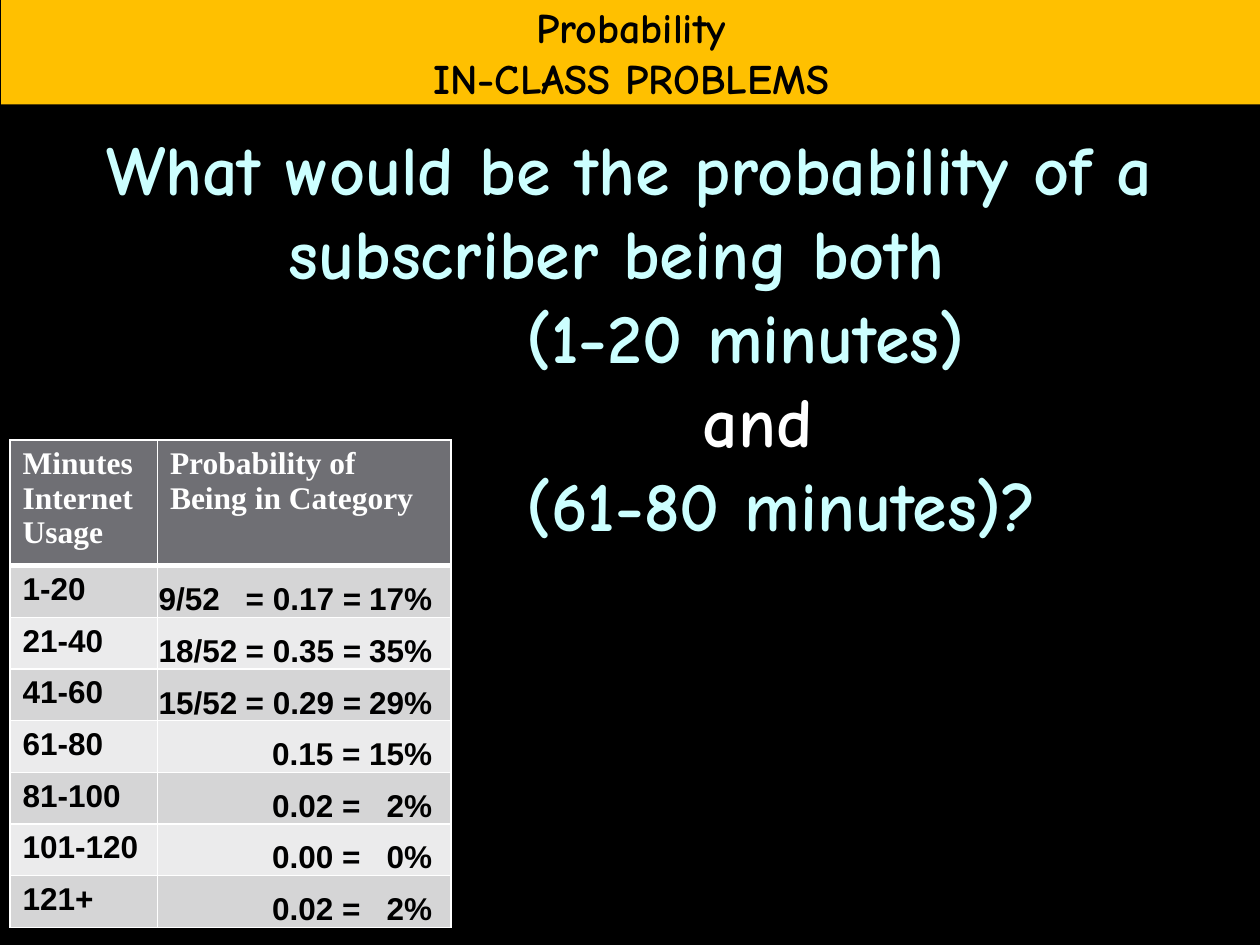
from pptx import Presentation
from pptx.dml.color import RGBColor
from pptx.enum.shapes import MSO_SHAPE
from pptx.enum.text import MSO_ANCHOR, PP_ALIGN
from pptx.oxml.ns import qn
from pptx.util import Inches, Pt
from lxml.etree import SubElement

COLORS = {name: RGBColor.from_string(h) for name, h in {
    "black": "000000", "white": "FFFFFF", "gold": "FFC000", "cyan": "CCFFFF",
    "head": "6F6F74", "odd": "D5D5D6", "even": "EBEBEC"}.items()}


def style(p, size, name, color):
    f = p.font
    f.size, f.name, f.bold = Pt(size), name, True
    f.color.rgb = COLORS[color]


def border(cell, side, width):
    ln = SubElement(cell._tc.get_or_add_tcPr(), qn(f"a:ln{side}"), w=str(Pt(width)))
    fill = SubElement(ln, qn("a:solidFill"))
    SubElement(fill, qn("a:srgbClr"), val=str(COLORS["white"]))


prs = Presentation()
prs.slide_width, prs.slide_height = Inches(10), Inches(7.5)
s = prs.slides.add_slide(prs.slide_layouts[6])
s.background.fill.solid()
s.background.fill.fore_color.rgb = COLORS["black"]

# Question: centred opening, then indented lines
tf = s.shapes.add_textbox(Inches(0.08), Inches(0.95), Inches(9.83), Inches(3.47)).text_frame
tf.word_wrap = True
question = [
    ("What would be the probability of a subscriber being both ", 0, "cyan"),
    ("(1-20 minutes)", 4, "cyan"),
    ("and", 5.4, "white"),
    ("(61-80 minutes)?", 4, "cyan"),
]
for i, (text, indent, color) in enumerate(question):
    p = tf.add_paragraph() if i else tf.paragraphs[0]
    p.text = text
    style(p, 40, "Comic Neue", color)
    if indent:
        p._p.get_or_add_pPr().set("marL", str(Inches(indent)))
    else:
        p.alignment = PP_ALIGN.CENTER

# Probability table; tabs line up the fractions, decimals and percentages
rows = [
    ("Minutes Internet Usage", "Probability of Being in Category"),
    ("1-20", "9/52\t= 0.17 =\t17%"),
    ("21-40", "18/52\t= 0.35 =\t35%"),
    ("41-60", "15/52\t= 0.29 =\t29%"),
    ("61-80", "\t\t0.15 =\t15%"),
    ("81-100", "\t\t0.02 =\t2%"),
    ("101-120", "\t\t0.00 =\t0%"),
    ("121+", "\t\t0.02 =\t2%"),
]
TABS = [(0.69, "l"), (0.9, "l"), (2.17, "r")]
table = s.shapes.add_table(len(rows), 2, Inches(0.08), Inches(3.49),
                           Inches(3.5), Inches(3.84)).table
for col, width in zip(table.columns, (1.17, 2.33)):
    col.width = Inches(width)
for r, row in enumerate(rows):
    table.rows[r].height = Inches(0.41 if r else 1)
    for c, text in enumerate(row):
        cell = table.cell(r, c)
        p = cell.text_frame.paragraphs[0]
        p.text = text
        if r == 0:
            style(p, 18, "Times New Roman", "white")
        else:
            style(p, 18, "Arial", "black")
        if r and c:
            cell.vertical_anchor = MSO_ANCHOR.BOTTOM
            cell.margin_left = cell.margin_right = cell.margin_top = Inches(0.01)
            cell.margin_bottom = 0
            tabs = SubElement(p._p.get_or_add_pPr(), qn("a:tabLst"))
            # Tab stops precede the default run properties
            tabs.getparent().insert(0, tabs)
            for pos, align in TABS:
                SubElement(tabs, qn("a:tab"), pos=str(Inches(pos)), algn=align)
        for side in "LRTB":
            thick = (r, side) in ((0, "B"), (1, "T"))
            border(cell, side, 3 if thick else 1)
        cell.fill.solid()
        cell.fill.fore_color.rgb = COLORS["head" if r == 0 else "odd" if r % 2 else "even"]

# Title bar
sp = s.shapes.add_shape(MSO_SHAPE.RECTANGLE, Inches(0.01), 0, Inches(10), Inches(0.83))
sp.shadow.inherit = False
sp.fill.solid()
sp.fill.fore_color.rgb = COLORS["gold"]
sp.line.fill.background()
tf = sp.text_frame
tf.word_wrap = False
tf.vertical_anchor = MSO_ANCHOR.MIDDLE
tf.text = "Probability\nIN-CLASS PROBLEMS"
for p in tf.paragraphs:
    p.alignment = PP_ALIGN.CENTER
    style(p, 24, "Comic Neue", "black")

prs.save("out.pptx")
